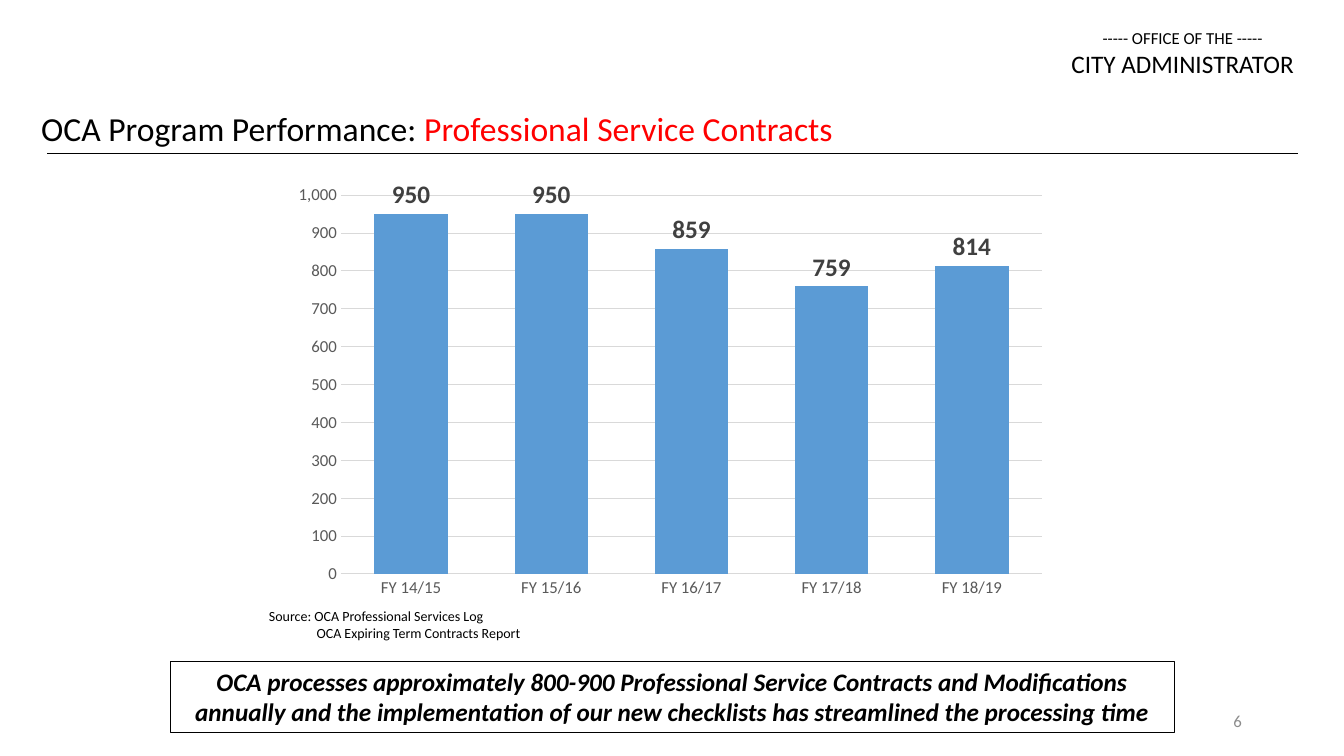
from lxml import etree
from pptx import Presentation
from pptx.chart.data import CategoryChartData
from pptx.dml.color import RGBColor
from pptx.enum.chart import XL_CHART_TYPE, XL_LABEL_POSITION, XL_TICK_MARK
from pptx.enum.shapes import MSO_CONNECTOR, MSO_SHAPE
from pptx.enum.text import MSO_ANCHOR, PP_ALIGN
from pptx.oxml.ns import qn
from pptx.util import Cm, Pt


def rgb(value):
    return RGBColor.from_string(value)


def style(font, size, color, bold=False, italic=False):
    font.name = "Calibri"
    font.size = Pt(size)
    font.color.rgb = rgb(color)
    font.bold = bold
    font.italic = italic


prs = Presentation()
prs.slide_width, prs.slide_height = Cm(33.87), Cm(19.05)
s = prs.slides.add_slide(prs.slide_layouts[6])

texts = [
    ((26.72, 0.58, 6.17, 1.55), PP_ALIGN.CENTER, [
        [("----- OFFICE OF THE -----", 12, "000000")],
        [("CITY ADMINISTRATOR", 18, "000000")]]),
    ((0.79, 2.59, 20.45, 1.27), PP_ALIGN.LEFT, [
        [("OCA Program Performance: ", 24, "000000"),
         ("Professional Service Contracts", 24, "FF0000")]]),
    ((23.93, 17.65, 7.62, 1.02), PP_ALIGN.RIGHT, [[("6", 12, "8C8C8C")]]),
    ((6.53, 15.19, 6.96, 1.12), PP_ALIGN.LEFT, [
        [("Source: OCA Professional Services Log", 10, "000000")],
        [("OCA Expiring Term Contracts Report", 10, "000000")]]),
]
for box, align, paragraphs in texts:
    sp = s.shapes.add_textbox(*map(Cm, box))
    tf = sp.text_frame
    tf.word_wrap = align == PP_ALIGN.RIGHT
    if tf.word_wrap:
        tf.vertical_anchor = MSO_ANCHOR.MIDDLE
    for i, runs in enumerate(paragraphs):
        p = tf.add_paragraph() if i else tf.paragraphs[0]
        p.alignment = align
        for text, size, color in runs:
            r = p.add_run()
            r.text = text
            style(r.font, size, color)
p._p.get_or_add_pPr().set("marL", str(Cm(1.2)))

rule = s.shapes.add_connector(
    MSO_CONNECTOR.STRAIGHT, Cm(1.19), Cm(3.86), Cm(32.72), Cm(3.86))
rule.line.color.rgb = rgb("000000")
rule.line.width = Pt(0.5)
etree.SubElement(rule._element.spPr, qn("a:effectLst"))

data = CategoryChartData(number_format="#,##0")
data.categories = ["FY 14/15", "FY 15/16", "FY 16/17", "FY 17/18", "FY 18/19"]
data.add_series("Series 1", [950, 950, 859, 759, 814])
chart = s.shapes.add_chart(
    XL_CHART_TYPE.COLUMN_CLUSTERED,
    Cm(7.19), Cm(4.39), Cm(19.48), Cm(10.8), data).chart
style(chart.font, 10, "000000")
chart.has_title = False
chart.has_legend = False

plot = chart.plots[0]
plot.gap_width = 91
plot.overlap = -24
plot.vary_by_categories = False
bars = plot.series[0]
bars.format.fill.solid()
bars.format.fill.fore_color.rgb = rgb("5B9BD5")
labels = bars.data_labels
labels.show_value = True
labels.position = XL_LABEL_POSITION.OUTSIDE_END
labels.number_format = "#,##0"
labels.number_format_is_linked = False
style(labels.font, 18, "404040", bold=True)

years, counts = chart.category_axis, chart.value_axis
for axis in (years, counts):
    axis.major_tick_mark = XL_TICK_MARK.NONE
    axis.minor_tick_mark = XL_TICK_MARK.NONE
    style(axis.tick_labels.font, 12, "595959")
counts.minimum_scale = 0
counts.maximum_scale = 1000
counts.major_unit = 100
counts.tick_labels.number_format = "#,##0"
counts.tick_labels.number_format_is_linked = False
counts.format.line.fill.background()
for line in (years.format.line, counts.major_gridlines.format.line):
    line.color.rgb = rgb("D9D9D9")
    line.width = Pt(0.75)

area = chart._chartSpace.find(".//" + qn("c:plotArea"))
for old in area.findall(qn("c:layout")):
    area.remove(old)
layout = etree.Element(qn("c:layout"))
manual = etree.SubElement(layout, qn("c:manualLayout"))
for tag, val in [("layoutTarget", "inner"), ("xMode", "edge"), ("yMode", "edge"),
                 ("x", "0.072"), ("y", "0.049"), ("w", "0.907"), ("h", "0.884")]:
    etree.SubElement(manual, qn("c:" + tag)).set("val", val)
area.insert(0, layout)

sp = s.shapes.add_shape(
    MSO_SHAPE.RECTANGLE, Cm(4.29), Cm(16.66), Cm(25.3), Cm(1.8))
sp.shadow.inherit = False
sp.fill.background()
sp.line.color.rgb = rgb("000000")
sp.line.width = Pt(0.75)
tf = sp.text_frame
tf.word_wrap = True
tf.vertical_anchor = MSO_ANCHOR.TOP
p = tf.paragraphs[0]
p.alignment = PP_ALIGN.CENTER
r = p.add_run()
r.text = ("OCA processes approximately 800-900 Professional Service Contracts "
          "and Modifications annually and the implementation of our new "
          "checklists has streamlined the processing time")
style(r.font, 18, "000000", bold=True, italic=True)

prs.save("out.pptx")
